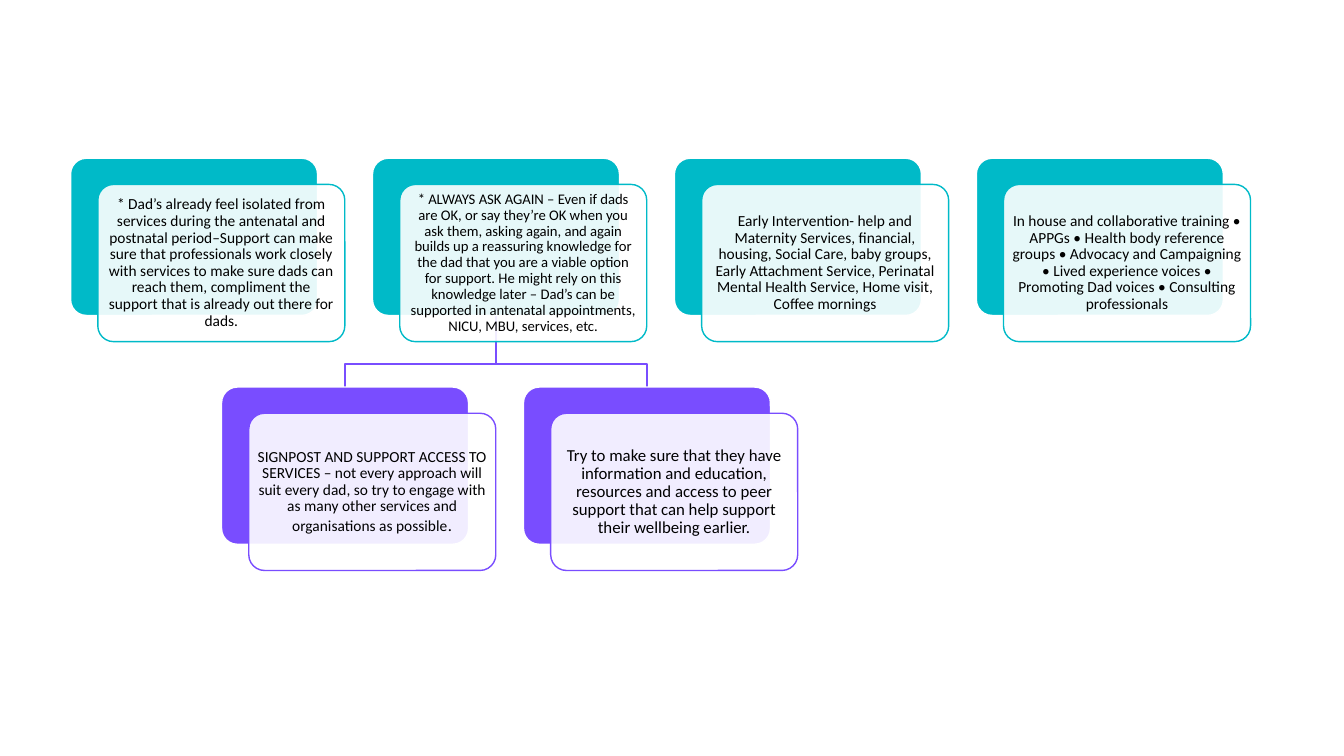
"""Build a slide of layered cards on ways to support dads."""
import pptx
import pptx.util
import pptx.dml.color
import pptx.enum.shapes
import pptx.enum.text
import pptx.oxml.ns
import lxml.etree

Inches = pptx.util.Inches
Pt = pptx.util.Pt
RGB = pptx.dml.color.RGBColor

TEAL = RGB(0x00, 0xBA, 0xC8)
VIOLET = RGB(0x79, 0x4D, 0xFF)
WHITE = RGB(0xFF, 0xFF, 0xFF)
BLACK = RGB(0x00, 0x00, 0x00)

ISOLATED = (
    "* Dad’s already feel isolated from services during the antenatal and "
    "postnatal period–Support can make sure that professionals work closely "
    "with services to make sure dads can reach them, compliment the support "
    "that is already out there for dads.")
ASK = (
    "* ALWAYS ASK AGAIN – Even if dads are OK, or say they’re OK when you ask "
    "them, asking again, and again builds up a reassuring knowledge for the "
    "dad that you are a viable option for support. He might rely on this "
    "knowledge later – Dad’s can be supported in antenatal appointments, "
    "NICU, MBU, services, etc.")
EARLY = (
    "Early Intervention- help and Maternity Services, financial, housing, "
    "Social Care, baby groups, Early Attachment Service, Perinatal Mental "
    "Health Service, Home visit, Coffee mornings")
TRAINING = (
    "In house and collaborative training • APPGs • Health body reference "
    "groups • Advocacy and Campaigning • Lived experience voices • Promoting "
    "Dad voices • Consulting professionals")
SIGNPOST = (
    "SIGNPOST AND SUPPORT ACCESS TO SERVICES – not every approach will suit "
    "every dad, so try to engage with as many other services and "
    "organisations as possible")
INFORM = (
    "Try to make sure that they have information and education, resources "
    "and access to peer support that can help support their wellbeing "
    "earlier.")

CARDS = [
    (0, 0, [(ISOLATED, 11, "Calibri")]),
    (1, 0, [(ASK, 10.5, "Calibri")]),
    (0.5, 1, [(SIGNPOST, 11, "Calibri"), (".", 13, "Roboto")]),
    (1.5, 1, [(INFORM, 12, "Calibri")]),
    (2, 0, [(EARLY, 11, "Calibri")]),
    (3, 0, [(TRAINING, 11, "Calibri")]),
]
COLORS = [TEAL, VIOLET]
PARENT = 1
CHILDREN = [1.5, 0.5]

LEFT, TOP = 0.7, 1.57
WIDE, HIGH = 2.45, 1.56
STEP, DROP = WIDE * 11 / 9, 2.27
SHIFT = 0.27, 0.26
BEND = 0.23
INSET = 0.04


def place(col, row):
    """Return the left and top of a card in inches."""
    return LEFT + col * STEP, TOP + row * DROP


def link(slide, col):
    """Draw the elbow line from the parent card to a lower card."""
    start = place(PARENT, 0)[0] + WIDE / 2
    left, foot = place(col, 1)
    end = left + WIDE / 2
    pen = slide.shapes.build_freeform(
        Inches(start), Inches(TOP + HIGH), scale=1.0)
    points = [(start, foot - BEND), (end, foot - BEND), (end, foot)]
    pen.add_line_segments(
        [(Inches(x), Inches(y)) for x, y in points], close=False)
    line = pen.convert_to_shape()
    line.shadow.inherit = False
    line.fill.background()
    line.line.color.rgb = VIOLET
    line.line.width = Pt(1)


def panel(slide, x, y, fill, edge):
    """Add one rounded panel."""
    shape = slide.shapes.add_shape(
        pptx.enum.shapes.MSO_SHAPE.ROUNDED_RECTANGLE,
        Inches(x), Inches(y), Inches(WIDE), Inches(HIGH))
    shape.adjustments[0] = 0.1
    shape.shadow.inherit = False
    shape.fill.solid()
    shape.fill.fore_color.rgb = fill
    shape.line.color.rgb = edge
    shape.line.width = Pt(1)
    return shape


def fade(shape, share):
    """Set the opacity of a panel's fill in percent."""
    qn = pptx.oxml.ns.qn
    fill = shape.element.spPr.find(qn("a:solidFill"))
    alpha = lxml.etree.SubElement(fill.find(qn("a:srgbClr")), qn("a:alpha"))
    alpha.set("val", str(share * 1000))


def write(shape, runs):
    """Write centred text into a panel."""
    frame = shape.text_frame
    frame.word_wrap = True
    frame.vertical_anchor = pptx.enum.text.MSO_ANCHOR.MIDDLE
    frame.margin_left = frame.margin_right = Inches(INSET)
    frame.margin_top = frame.margin_bottom = Inches(INSET)
    para = frame.paragraphs[0]
    para.alignment = pptx.enum.text.PP_ALIGN.CENTER
    para.line_spacing = 0.9
    para.font.color.rgb = BLACK
    for text, size, font in runs:
        run = para.add_run()
        run.text = text
        run.font.size = Pt(size)
        run.font.name = font
        run.font.color.rgb = BLACK


def main():
    """Build and save the slide."""
    deck = pptx.Presentation()
    deck.slide_width, deck.slide_height = Inches(13.33), Inches(7.5)
    slide = deck.slides.add_slide(deck.slide_layouts.get_by_name("Blank"))
    for col in CHILDREN:
        link(slide, col)
    for col, row, runs in CARDS:
        x, y = place(col, row)
        panel(slide, x, y, COLORS[row], WHITE)
        front = panel(slide, x + SHIFT[0], y + SHIFT[1], WHITE, COLORS[row])
        fade(front, 90)
        write(front, runs)
    deck.save("out.pptx")


if __name__ == "__main__":
    main()
